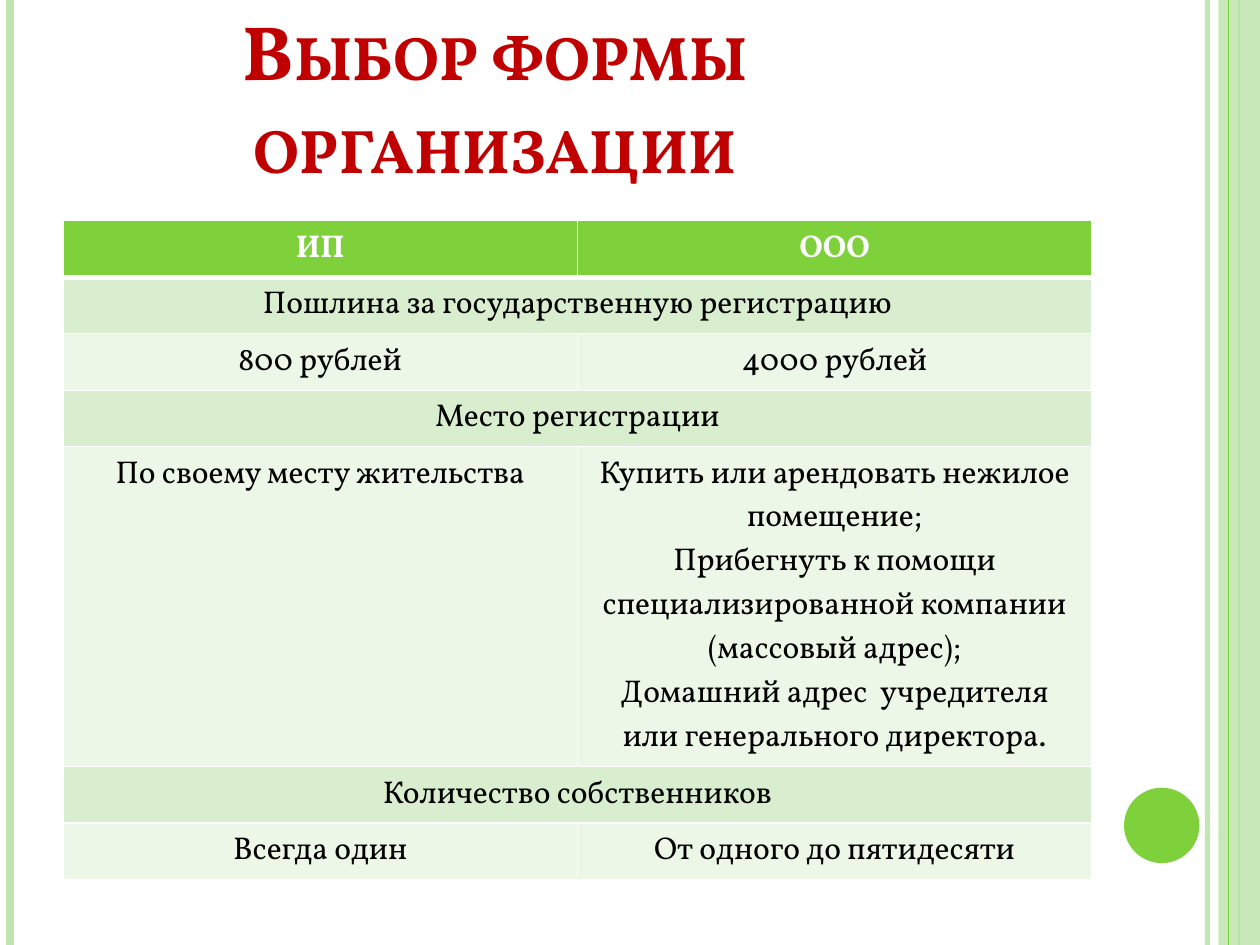
from lxml import etree
from pptx import Presentation
from pptx.dml.color import RGBColor
from pptx.enum.shapes import MSO_CONNECTOR, MSO_SHAPE
from pptx.enum.text import MSO_ANCHOR, PP_ALIGN
from pptx.oxml.ns import qn
from pptx.util import Cm, Pt

STRAIGHT = MSO_CONNECTOR.STRAIGHT
RECTANGLE, OVAL = MSO_SHAPE.RECTANGLE, MSO_SHAPE.OVAL
CENTER, BOTTOM = PP_ALIGN.CENTER, MSO_ANCHOR.BOTTOM

FONT = "Vollkorn"
COLORS = {
    "title": "C00000",
    "accent": "7FD13B",
    "stripe": "C0E5AF",
    "section": "D8EECE",
    "answer": "ECF7E8",
    "text": "000000",
    "white": "FFFFFF",
}
SLIDE_WIDTH, SLIDE_HEIGHT = Cm(25.4), Cm(19.05)
ROW_HEIGHT, ADDRESS_ROW_HEIGHT = Cm(1.14), Cm(6.45)
ADDRESS_ROW = 4
ROWS = [
    ["ИП", "ООО"],
    ["Пошлина за государственную регистрацию"],
    ["800 рублей", "4000 рублей"],
    ["Место регистрации"],
    [
        "По своему месту жительства",
        "Купить или арендовать нежилое помещение;\n"
        "Прибегнуть к помощи специализированной компании (массовый адрес);\n"
        "Домашний адрес  учредителя или генерального директора.",
    ],
    ["Количество собственников"],
    ["Всегда один", "От одного до пятидесяти"],
]


def paint(fill, color, opacity=100):
    """Apply a solid colour with an opacity in percent."""
    fill.solid()
    fill.fore_color.rgb = RGBColor.from_string(COLORS[color])
    if opacity < 100:
        color_node = fill._xPr.find(qn("a:solidFill"))[0]
        etree.SubElement(color_node, qn("a:alpha"), val=str(opacity * 1000))


def add_stripe(slide, x, color, width, opacity=100):
    """Draw a vertical line over the full slide height."""
    stripe = slide.shapes.add_connector(STRAIGHT, x, 0, x, SLIDE_HEIGHT)
    stripe.line.width = Pt(width)
    paint(stripe.line.fill, color, opacity)
    etree.SubElement(stripe._element.spPr, qn("a:effectLst"))


def add_ornament(slide, kind, left, top, width, height, color, opacity=100):
    """Draw a filled shape without outline or shadow."""
    ornament = slide.shapes.add_shape(kind, left, top, width, height)
    ornament.shadow.inherit = False
    ornament.line.fill.background()
    paint(ornament.fill, color, opacity)


def style_paragraph(paragraph, size, color, bold):
    """Centre a paragraph and set its font."""
    paragraph.alignment = CENTER
    paragraph.font.name = FONT
    paragraph.font.size = Pt(size)
    paragraph.font.bold = bold
    paragraph.font.color.rgb = RGBColor.from_string(COLORS[color])


def add_title(slide, text):
    """Add the slide heading in small capitals."""
    heading = slide.shapes.add_textbox(Cm(1.27), Cm(0.78), Cm(17.42), Cm(3.15))
    frame = heading.text_frame
    frame.word_wrap = True
    frame.vertical_anchor = BOTTOM
    frame.text = text
    paragraph = frame.paragraphs[0]
    style_paragraph(paragraph, 44, "title", True)
    paragraph._p.pPr.find(qn("a:defRPr")).set("cap", "small")


def underline_cell(cell, width):
    """Put a white border below a cell, ahead of its fill in the XML."""
    border = etree.Element(qn("a:lnB"), w=str(Pt(width)))
    border_fill = etree.SubElement(border, qn("a:solidFill"))
    etree.SubElement(border_fill, qn("a:srgbClr"), val=COLORS["white"])
    cell._tc.get_or_add_tcPr().insert(0, border)


def add_comparison(slide, rows):
    """Add the table, where a single-text row spans both columns."""
    heights = [ROW_HEIGHT] * len(rows)
    heights[ADDRESS_ROW] = ADDRESS_ROW_HEIGHT
    table = slide.shapes.add_table(
        len(rows), 2, Cm(1.27), Cm(4.45), Cm(20.74), sum(heights)
    ).table
    for row_index, texts in enumerate(rows):
        table.rows[row_index].height = heights[row_index]
        is_header = row_index == 0
        is_section = len(texts) == 1
        background = "accent" if is_header else "section" if is_section else "answer"
        if is_section:
            table.cell(row_index, 0).merge(table.cell(row_index, 1))
        for column_index, text in enumerate(texts):
            cell = table.cell(row_index, column_index)
            paint(cell.fill, background)
            if is_header:
                underline_cell(cell, 3)
            cell.text = text
            for paragraph in cell.text_frame.paragraphs:
                text_color = "white" if is_header else "text"
                style_paragraph(paragraph, 18, text_color, is_header)


def main():
    """Build the slide and save it."""
    presentation = Presentation()
    presentation.slide_width, presentation.slide_height = SLIDE_WIDTH, SLIDE_HEIGHT
    slide = presentation.slides.add_slide(presentation.slide_layouts[6])

    add_stripe(slide, Cm(24.34), "stripe", 3, 93)
    add_stripe(slide, Cm(0.21), "stripe", 4.5)
    add_stripe(slide, Cm(24.98), "accent", 1.5)
    add_ornament(slide, RECTANGLE, Cm(24.56), 0, Cm(0.84), SLIDE_HEIGHT, "stripe", 87)
    add_stripe(slide, Cm(24.76), "accent", 0.75)
    add_ornament(slide, OVAL, Cm(22.66), Cm(15.88), Cm(1.52), Cm(1.52), "accent")

    add_title(slide, "Выбор формы организации")
    add_comparison(slide, ROWS)
    presentation.save("out.pptx")


if __name__ == "__main__":
    main()
